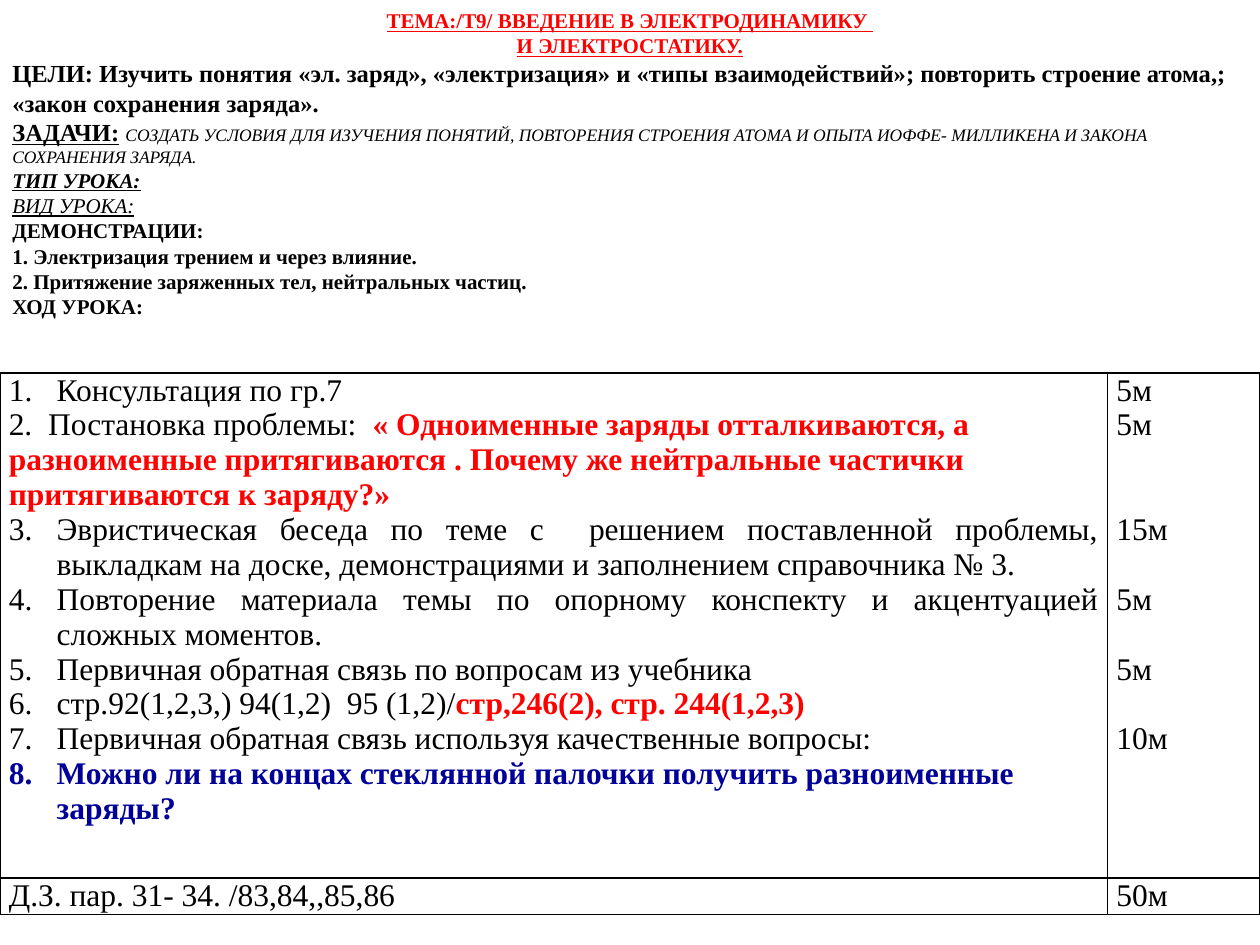
import pptx
import pptx.dml.color
import pptx.enum.text
import pptx.oxml.ns
import pptx.util
from lxml import etree
from pptx.util import Inches

RED = pptx.dml.color.RGBColor(0xFF, 0x00, 0x00)
BLACK = pptx.dml.color.RGBColor(0x00, 0x00, 0x00)
NAVY = pptx.dml.color.RGBColor(0x00, 0x00, 0x99)
WHITE = pptx.dml.color.RGBColor(0xFF, 0xFF, 0xFF)
FONT = "Times New Roman"
TABLE_SIZE = 18
LINE_HEIGHT = 19.93  # points, one line of table text
HANGING = Inches(0.38)

CENTER = pptx.enum.text.PP_ALIGN.CENTER
LEFT = pptx.enum.text.PP_ALIGN.LEFT
JUSTIFY = pptx.enum.text.PP_ALIGN.JUSTIFY

TITLE = dict(size=12, bold=True, underline=True, color=RED)
HEADING = dict(size=12, bold=True)
RED_BOLD = dict(bold=True, color=RED)

# Each paragraph: alignment, paragraph style, runs of (text, style of the run)
HEADER = [
    (CENTER, TITLE, [("ТЕМА:/Т9/ ВВЕДЕНИЕ В ЭЛЕКТРОДИНАМИКУ ", {})]),
    (CENTER, TITLE, [("И ЭЛЕКТРОСТАТИКУ.", {})]),
    (LEFT, dict(size=14, bold=True), [
        ("ЦЕЛИ: Изучить понятия «эл. заряд», «электризация» и «типы взаимодействий»; "
         "повторить строение атома,; «закон сохранения заряда».", {})]),
    (LEFT, {}, [
        ("ЗАДАЧИ:", dict(size=14, bold=True, underline=True)),
        (" ", dict(size=14, bold=True)),
        ("СОЗДАТЬ УСЛОВИЯ ДЛЯ ИЗУЧЕНИЯ ПОНЯТИЙ, ПОВТОРЕНИЯ СТРОЕНИЯ АТОМА И ОПЫТА "
         "ИОФФЕ- МИЛЛИКЕНА И ЗАКОНА СОХРАНЕНИЯ ЗАРЯДА.", dict(size=10, italic=True))]),
    (LEFT, dict(size=12, bold=True, italic=True, underline=True), [("ТИП УРОКА:", {})]),
    (LEFT, dict(size=12, italic=True, underline=True), [("ВИД УРОКА:", {})]),
    (LEFT, HEADING, [("ДЕМОНСТРАЦИИ:", {})]),
    (LEFT, HEADING, [("1. Электризация трением и через влияние.", {})]),
    (LEFT, HEADING, [("2. Притяжение заряженных тел, нейтральных частиц.", {})]),
    (LEFT, HEADING, [("ХОД УРОКА:", {})]),
]

# Each step: first number of its list (None for no number), alignment, style, runs
STEPS = [
    (1, LEFT, {}, [("Консультация по гр.7", {})]),
    (None, LEFT, {}, [
        ("2.  Постановка проблемы:  ", {}),
        ("« Одноименные заряды отталкиваются, а разноименные притягиваются . "
         "Почему же нейтральные частички притягиваются к заряду?»", RED_BOLD)]),
    (3, JUSTIFY, {}, [
        ("Эвристическая беседа по теме с  решением поставленной проблемы, выкладкам "
         "на доске, демонстрациями и заполнением справочника № 3.", {})]),
    (3, JUSTIFY, {}, [
        ("Повторение материала темы по опорному конспекту и акцентуацией "
         "сложных моментов.", {})]),
    (3, LEFT, {}, [("Первичная обратная связь по вопросам из учебника", {})]),
    (3, LEFT, {}, [
        ("стр.92(1,2,3,) 94(1,2)  95 (1,2)/", {}),
        ("стр,246(2), стр. 244(1,2,3)", RED_BOLD)]),
    (3, LEFT, {}, [("Первичная обратная связь используя качественные вопросы:", {})]),
    (3, LEFT, dict(bold=True, color=NAVY), [
        ("Можно ли на концах стеклянной палочки получить разноименные заряды?", {})]),
]

# Duration and the number of lines left free above it
DURATIONS = [("5м", 0), ("5м", 0), ("15м", 2), ("5м", 1), ("5м", 1), ("10м", 1)]


def style_font(font, size=TABLE_SIZE, bold=False, italic=False, underline=False, color=BLACK):
    font.name = FONT
    font.size = pptx.util.Pt(size)
    font.bold, font.italic, font.underline = bold, italic, underline
    font.color.rgb = color


def write_paragraph(paragraph, alignment, style, runs):
    paragraph.alignment = alignment
    style_font(paragraph.font, **style)
    for text, run_style in runs:
        run = paragraph.add_run()
        run.text = text
        if len(runs) > 1:
            style_font(run.font, **{**style, **run_style})


def paragraphs_for(text_frame, items):
    """Pair each item with a paragraph, using the frame's first one."""
    for index, item in enumerate(items):
        yield (text_frame.add_paragraph() if index else text_frame.paragraphs[0]), item


def number_paragraph(paragraph, start):
    properties = paragraph._p.get_or_add_pPr()
    properties.set("marL", str(HANGING))
    properties.set("indent", str(-HANGING))
    numbering = etree.SubElement(properties, pptx.oxml.ns.qn("a:buAutoNum"), type="arabicPeriod")
    if start > 1:
        numbering.set("startAt", str(start))


def add_header(slide, left, top, width, height):
    text_frame = slide.shapes.add_textbox(left, top, width, height).text_frame
    text_frame.word_wrap = True
    text_frame.vertical_anchor = pptx.enum.text.MSO_ANCHOR.MIDDLE
    for paragraph, content in paragraphs_for(text_frame, HEADER):
        write_paragraph(paragraph, *content)


def format_cell(cell):
    cell.margin_left = cell.margin_right = Inches(0.07)
    cell.margin_top = cell.margin_bottom = 0
    cell.fill.solid()
    cell.fill.fore_color.rgb = WHITE
    properties = cell._tc.get_or_add_tcPr()
    for index, side in enumerate(("lnL", "lnR", "lnT", "lnB")):
        line = etree.Element(pptx.oxml.ns.qn(f"a:{side}"), w=str(pptx.util.Pt(1)))
        fill = etree.SubElement(line, pptx.oxml.ns.qn("a:solidFill"))
        etree.SubElement(fill, pptx.oxml.ns.qn("a:srgbClr"), val=str(BLACK))
        properties.insert(index, line)


def add_lesson_plan(slide, left, top, width, height):
    table = slide.shapes.add_table(2, 2, left, top, width, height).table
    table.first_row = table.horz_banding = False
    time_width, total_height = Inches(1.21), Inches(0.29)
    table.columns[0].width, table.columns[1].width = width - time_width, time_width
    table.rows[0].height, table.rows[1].height = height - total_height, total_height
    for cell in table.iter_cells():
        format_cell(cell)

    for paragraph, (start, *content) in paragraphs_for(table.cell(0, 0).text_frame, STEPS):
        if start:
            number_paragraph(paragraph, start)
        write_paragraph(paragraph, *content)

    for paragraph, (text, gap) in paragraphs_for(table.cell(0, 1).text_frame, DURATIONS):
        paragraph.space_before = pptx.util.Pt(gap * LINE_HEIGHT)
        write_paragraph(paragraph, LEFT, {}, [(text, {})])

    for column, text in enumerate(("Д.З. пар. 31- 34. /83,84,,85,86", "50м")):
        paragraph = table.cell(1, column).text_frame.paragraphs[0]
        write_paragraph(paragraph, LEFT, {}, [(text, {})])


def main():
    presentation = pptx.Presentation()
    presentation.slide_width, presentation.slide_height = Inches(10), Inches(7.5)
    slide = presentation.slides.add_slide(presentation.slide_layouts[6])
    add_lesson_plan(slide, 0, Inches(2.96), Inches(10), Inches(4.3))
    add_header(slide, 0, 0, Inches(10), Inches(2.59))
    presentation.save("out.pptx")


if __name__ == "__main__":
    main()
